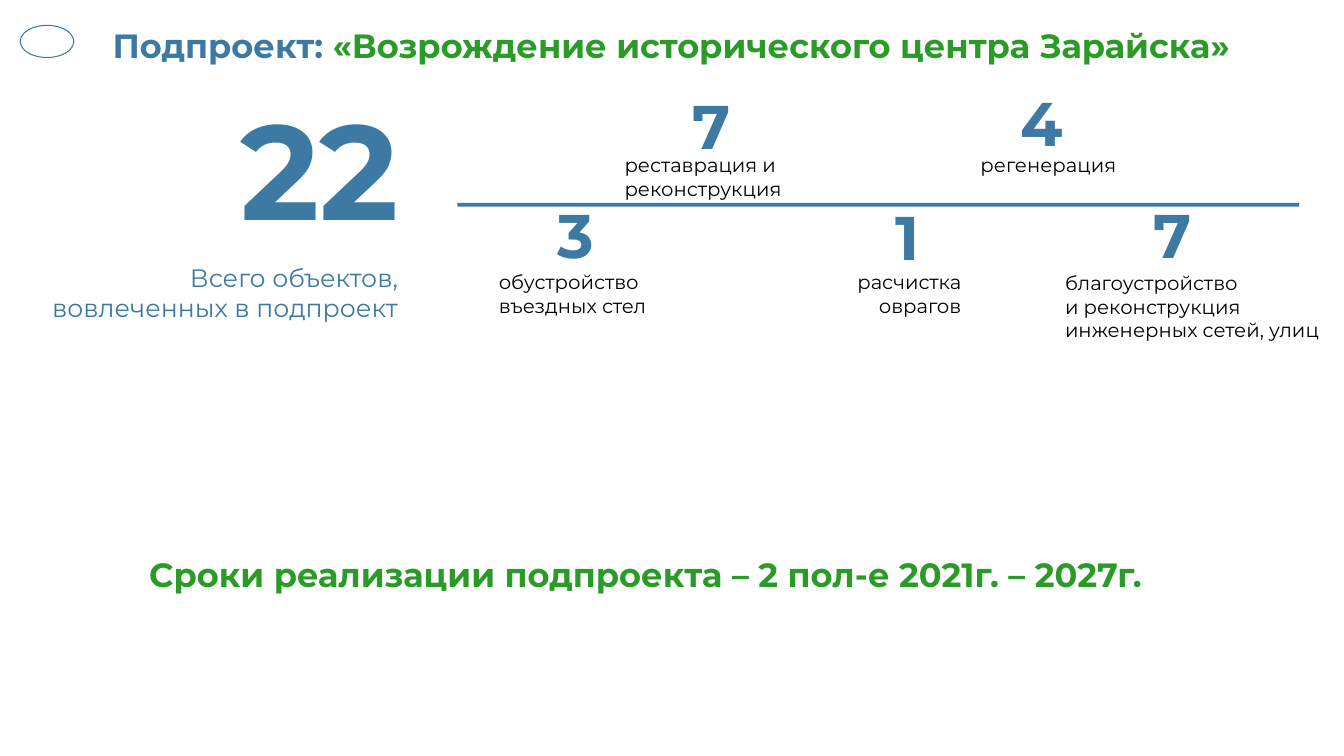
from dataclasses import dataclass
from typing import Optional

from pptx import Presentation
from pptx.dml.color import RGBColor
from pptx.enum.shapes import MSO_SHAPE
from pptx.enum.text import MSO_ANCHOR, PP_ALIGN
from pptx.util import Cm, Pt

FONT = "Montserrat"
COLORS = {"blue": "3C7AA3", "green": "2A9B27", "black": "000000"}


@dataclass
class Box:
    left: float
    top: float
    width: float
    height: float

    def lengths(self) -> tuple:
        return Cm(self.left), Cm(self.top), Cm(self.width), Cm(self.height)


@dataclass
class Style:
    size: float
    color: str
    bold: bool = False
    line_spacing: Optional[float] = None
    space_after: float = 0


@dataclass
class Group:
    number: str
    number_box: Box
    number_align: PP_ALIGN
    caption: str
    caption_box: Box
    caption_align: PP_ALIGN = PP_ALIGN.LEFT


HEADING = Style(24, "green", True)
TOTAL = Style(96, "blue", True, 28, 12)
TOTAL_CAPTION = Style(18, "blue", space_after=12)
NUMBER = Style(44, "blue", True, 28, 12)
CAPTION = Style(14, "black")

TITLE_BOX = Box(2.59, 0.38, 30.51, 1.63)
TOTAL_BOX = Box(0.84, 5.11, 9.47, 1.85)
TOTAL_CAPTION_BOX = Box(0.25, 6.48, 10.03, 1.8)
DEADLINE_BOX = Box(3.51, 13.84, 29.67, 1.27)
AXIS_BOX = Box(11.53, 5.11, 21.21, 0.1)
EMBLEM_BOX = Box(0.51, 0.64, 1.35, 0.81)

GROUPS = [
    Group("7", Box(15.77, 2.97, 2.9, 1.4), PP_ALIGN.RIGHT,
          "реставрация и реконструкция", Box(15.49, 3.73, 7.04, 1.45)),
    Group("4", Box(23.8, 2.9, 3.23, 1.4), PP_ALIGN.RIGHT,
          "регенерация", Box(24.46, 3.73, 4.2, 0.86)),
    Group("3", Box(11.35, 5.72, 6.3, 1.4), PP_ALIGN.CENTER,
          "обустройство въездных стел", Box(12.32, 6.68, 5.36, 1.45)),
    Group("1", Box(20.83, 5.77, 2.59, 1.4), PP_ALIGN.RIGHT,
          "расчистка оврагов", Box(19.35, 6.68, 5.13, 1.45), PP_ALIGN.RIGHT),
    Group("7", Box(27.31, 5.72, 2.97, 1.4), PP_ALIGN.RIGHT,
          "благоустройство \vи реконструкция инженерных сетей, улиц",
          Box(26.59, 6.71, 7.21, 2.06)),
]


def rgb(color: str) -> RGBColor:
    return RGBColor.from_string(COLORS[color])


def format_run(run, style: Style) -> None:
    run.font.name = FONT
    run.font.size = Pt(style.size)
    run.font.bold = style.bold
    run.font.color.rgb = rgb(style.color)


def add_text(slide, box: Box, text: str, style: Style, align=PP_ALIGN.LEFT):
    frame = slide.shapes.add_textbox(*box.lengths()).text_frame
    frame.word_wrap = True
    paragraph = frame.paragraphs[0]
    paragraph.text = text
    paragraph.alignment = align
    paragraph.space_after = Pt(style.space_after)
    if style.line_spacing:
        paragraph.line_spacing = Pt(style.line_spacing)
    for run in paragraph.runs:
        format_run(run, style)
    return frame


def add_title(slide) -> None:
    title = add_text(slide, TITLE_BOX, "Подпроект: ", Style(24, "blue", True))
    title.vertical_anchor = MSO_ANCHOR.MIDDLE
    title.paragraphs[0].line_spacing = 0.9
    project = title.paragraphs[0].add_run()
    project.text = "«Возрождение исторического центра Зарайска»"
    format_run(project, HEADING)


def add_emblem(slide) -> None:
    emblem = slide.shapes.add_shape(MSO_SHAPE.OVAL, *EMBLEM_BOX.lengths())
    emblem.shadow.inherit = False
    emblem.fill.background()
    emblem.line.color.rgb = rgb("blue")
    emblem.line.width = Pt(0.75)


def add_axis(slide) -> None:
    axis = slide.shapes.add_shape(MSO_SHAPE.RECTANGLE, *AXIS_BOX.lengths())
    axis.shadow.inherit = False
    axis.fill.solid()
    axis.fill.fore_color.rgb = rgb("blue")
    axis.line.fill.background()


def main() -> None:
    deck = Presentation()
    deck.slide_width, deck.slide_height = Cm(33.87), Cm(19.05)
    slide = deck.slides.add_slide(deck.slide_layouts[6])
    add_text(slide, TOTAL_CAPTION_BOX, "Всего объектов, вовлеченных в подпроект",
             TOTAL_CAPTION, PP_ALIGN.RIGHT)
    add_title(slide)
    add_emblem(slide)
    add_text(slide, TOTAL_BOX, "22", TOTAL, PP_ALIGN.RIGHT)
    for group in GROUPS:
        add_text(slide, group.caption_box, group.caption, CAPTION, group.caption_align)
        add_text(slide, group.number_box, group.number, NUMBER, group.number_align)
    add_text(slide, DEADLINE_BOX,
             "Сроки реализации подпроекта – 2 пол-е 2021г. – 2027г.", HEADING)
    add_axis(slide)
    deck.save("out.pptx")


if __name__ == "__main__":
    main()
